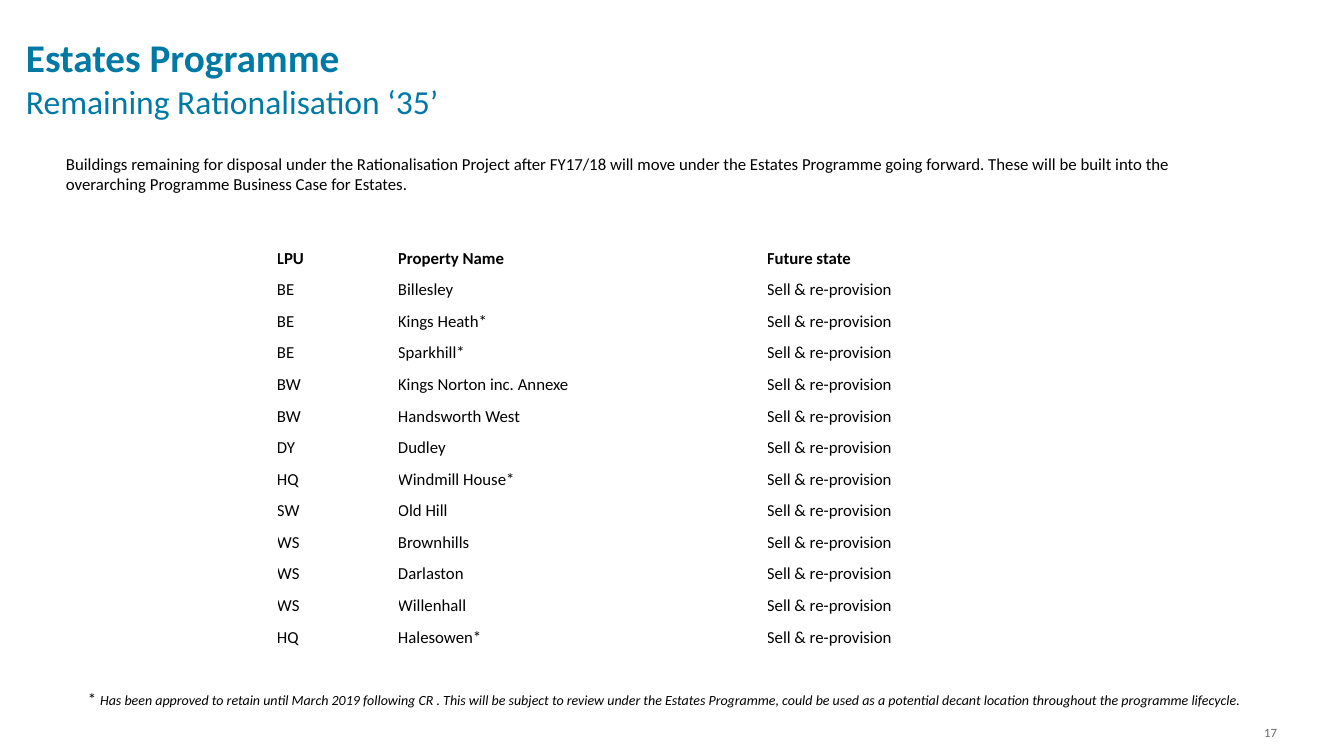
from pptx import Presentation
from pptx.dml.color import RGBColor
from pptx.enum.text import MSO_ANCHOR, PP_ALIGN
from pptx.oxml import parse_xml
from pptx.oxml.ns import nsdecls
from pptx.util import Pt

SCALE = 914400 / 100.8  # EMU in one px

BLUE, BLACK, GREY, WHITE = "007AA5", "000000", "666666", "FFFFFF"

ROWS = [("LPU", "Property Name", "Future state")] + [
    (unit, name, "Sell & re-provision")
    for unit, name in [
        ("BE", "Billesley"),
        ("BE", "Kings Heath*"),
        ("BE", "Sparkhill*"),
        ("BW", "Kings Norton inc. Annexe"),
        ("BW", "Handsworth West"),
        ("DY", "Dudley"),
        ("HQ", "Windmill House*"),
        ("SW", "Old Hill"),
        ("WS", "Brownhills"),
        ("WS", "Darlaston"),
        ("WS", "Willenhall"),
        ("HQ", "Halesowen*"),
    ]
]


def px(*nums):
    return [round(n * SCALE) for n in nums]


def color(code):
    return RGBColor.from_string(code)


def write(para, text, size=12, ink=BLACK, bold=False, italic=False):
    run = para.add_run()
    run.text = text
    font = run.font
    font.name, font.size = "Calibri", Pt(size)
    font.bold, font.italic = bold, italic
    font.color.rgb = color(ink)


class Page:
    """Holds the deck's style and its current slide."""

    def __init__(self, deck):
        self.slide = deck.slides.add_slide(deck.slide_layouts[6])

    def text(self, box, pad=(10, 5, 10, 5), anchor=MSO_ANCHOR.TOP, align=PP_ALIGN.LEFT):
        frame = self.slide.shapes.add_textbox(*px(*box)).text_frame
        frame.word_wrap = True
        frame.vertical_anchor = anchor
        (frame.margin_left, frame.margin_top,
         frame.margin_right, frame.margin_bottom) = px(*pad)
        para = frame.paragraphs[0]
        para.alignment = align
        return para

    def border(self, cell):
        props = cell._tc.get_or_add_tcPr()
        for side in "LRTB":
            props.append(parse_xml(
                f'<a:ln{side} {nsdecls("a")} w="12700"><a:solidFill>'
                f'<a:srgbClr val="{WHITE}"/></a:solidFill></a:ln{side}>'))

    def table(self, rows, left, top, widths, height):
        box = px(left, top, sum(widths), height)
        grid = self.slide.shapes.add_table(len(rows), len(widths), *box).table
        for col, width in zip(grid.columns, px(*widths)):
            col.width = width
        for r, row in enumerate(rows):
            for c, text in enumerate(row):
                cell = grid.cell(r, c)
                self.border(cell)
                cell.fill.solid()
                cell.fill.fore_color.rgb = color(WHITE)
                cell.vertical_anchor = MSO_ANCHOR.BOTTOM
                cell.margin_left = cell.margin_right = 0
                cell.margin_top = cell.margin_bottom = 0
                write(cell.text_frame.paragraphs[0], text, bold=r == 0)


def main():
    deck = Presentation()
    deck.slide_width, deck.slide_height = px(1344, 756)
    page = Page(deck)

    # Page number
    para = page.text((1196, 725, 81, 14), pad=(10, 5, 0, 5),
                     anchor=MSO_ANCHOR.MIDDLE, align=PP_ALIGN.RIGHT)
    write(para, "17", size=9, ink=GREY)

    # Title
    para = page.text((26, 0, 1210, 121), pad=(0, 5, 0, 0), anchor=MSO_ANCHOR.BOTTOM)
    write(para, "Estates Programme", size=28, ink=BLUE, bold=True)
    para.add_line_break()
    write(para, "Remaining Rationalisation ‘35’", size=24, ink=BLUE)

    # Property table
    page.table(ROWS, left=277, top=237, widths=(121, 369, 291), height=411)

    # Introduction
    para = page.text((56, 149, 1180, 50))
    write(para, "Buildings remaining for disposal under the Rationalisation Project "
                "after FY17/18 will move under the Estates Programme going forward. "
                "These will be built into the overarching Programme Business Case "
                "for Estates.")

    # Footnote
    para = page.text((78, 684, 1180, 47))
    write(para, "* ")
    write(para, "Has been approved to retain until March 2019 following CR . This will "
                "be subject to review under the Estates Programme, could be used as a "
                "potential decant location throughout the programme lifecycle.",
          size=10, italic=True)

    deck.save("out.pptx")


if __name__ == "__main__":
    main()
